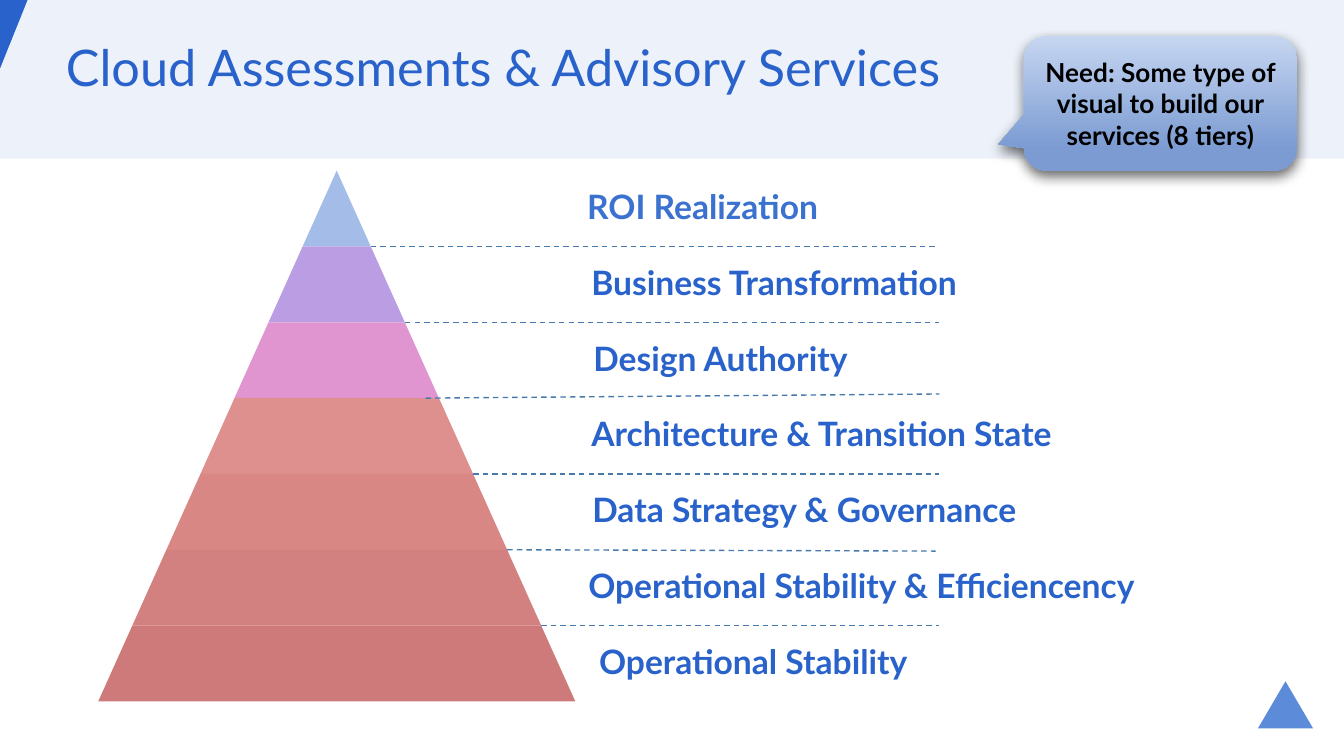
from dataclasses import dataclass

from lxml import etree
from pptx import Presentation
from pptx import util as u
from pptx.dml import color
from pptx.enum import dml, shapes, text
from pptx.oxml import ns

Pt = u.Pt


@dataclass(frozen=True)
class Theme:
    font: str = "Lato"
    blue: str = "2862CA"
    band: str = "EDF2FA"
    mark: str = "5C8BDA"
    rule: str = "4779AC"
    note_top: str = "C6D6F1"
    note_bottom: str = "7B9BD2"
    black: str = "000000"
    title_size: float = 27
    label_size: float = 18
    note_size: float = 14


@dataclass(frozen=True)
class Box:
    left: float
    top: float
    width: float
    height: float

    def lengths(self):
        return [Pt(value) for value in (self.left, self.top, self.width, self.height)]


@dataclass(frozen=True)
class Tier:
    label: str
    fill: str
    label_left: float
    label_color: str = Theme.blue
    rule_start: float = 0
    rule_end: float = 503.3
    rule_drop: float = 0


THEME = Theme()
TIERS = [
    Tier("ROI Realization", "A4BDE8", 314.6, "3B71CF", rule_end=502.6),
    Tier("Business Transformation", "BB9DE4", 316.8),
    Tier("Design Authority", "E195D0", 317.9, rule_start=-7.2, rule_drop=-2.2),
    Tier("Architecture & Transition State", "DD908E", 316.8),
    Tier("Data Strategy & Governance", "D98785", 317.4, rule_end=501.3, rule_drop=0.7),
    Tier("Operational Stability & Efficiencency", "D38080", 315.2),
    Tier("Operational Stability", "CE7A7A", 321.0),
]


def apply(target, **values):
    for name, value in values.items():
        setattr(target, name, value)


def rgb(value):
    return color.RGBColor.from_string(value)


def paint(shape, fill):
    shape.shadow.inherit = False
    shape.fill.solid()
    shape.fill.fore_color.rgb = rgb(fill)
    shape.line.fill.background()


def write(shape, words, size, ink, frame=None, paragraph=None, bold=False):
    apply(shape.text_frame, **(frame or {}))
    first = shape.text_frame.paragraphs[0]
    apply(first, **(paragraph or {}))
    run = first.add_run()
    run.text = words
    apply(run.font, name=THEME.font, size=Pt(size), bold=bold)
    run.font.color.rgb = rgb(ink)


def insets(value):
    return {f"margin_{side}": Pt(value) for side in ("left", "top", "right", "bottom")}


def add_polygon(slide, points, fill):
    start, *others = [(Pt(x), Pt(y)) for x, y in points]
    builder = slide.shapes.build_freeform(*start)
    builder.add_line_segments(others, close=True)
    polygon = builder.convert_to_shape()
    paint(polygon, fill)
    return polygon


def add_header(slide, box):
    title = slide.shapes.title
    band = slide.shapes.add_shape(shapes.MSO_SHAPE.RECTANGLE, *box.lengths())
    paint(band, THEME.band)
    corner = add_polygon(
        slide,
        [(box.left, box.top), (box.left + 14.8, box.top), (box.left, box.top + 36.8)],
        THEME.blue,
    )
    for backdrop in (band, corner):
        title.element.addprevious(backdrop.element)
    place = Box(box.left + 35.3, box.top + 19.4, 659.5, 41)
    apply(title, **dict(zip(("left", "top", "width", "height"), place.lengths())))
    frame = {
        **insets(0),
        "vertical_anchor": text.MSO_ANCHOR.TOP,
        "auto_size": text.MSO_AUTO_SIZE.NONE,
        "word_wrap": True,
    }
    paragraph = {"alignment": text.PP_ALIGN.LEFT, "line_spacing": 1.0, "space_before": Pt(0)}
    write(title, "Cloud Assessments & Advisory Services", THEME.title_size, THEME.blue,
          frame, paragraph)


def add_rule(slide, start, end):
    rule = slide.shapes.add_connector(
        shapes.MSO_CONNECTOR.STRAIGHT, *[Pt(value) for value in (*start, *end)]
    )
    apply(rule.line, width=Pt(0.75), dash_style=dml.MSO_LINE.DASH)
    rule.line.color.rgb = rgb(THEME.rule)
    etree.SubElement(rule.element.spPr, ns.qn("a:effectLst"))


def add_label(slide, box, tier):
    label = slide.shapes.add_textbox(*box.lengths())
    frame = {**insets(0), "vertical_anchor": text.MSO_ANCHOR.MIDDLE, "word_wrap": True}
    write(label, tier.label, THEME.label_size, tier.label_color, frame,
          {"line_spacing": 0.9}, bold=True)


def add_pyramid(slide, box, tiers):
    step = box.height / len(tiers)
    center = box.left + box.width / 2
    slope = box.width / 2 / len(tiers)
    for index, tier in enumerate(tiers):
        top, bottom = box.top + index * step, box.top + (index + 1) * step
        upper, lower = index * slope, (index + 1) * slope
        add_polygon(
            slide,
            [(center - lower, bottom), (center - upper, top),
             (center + upper, top), (center + lower, bottom)],
            tier.fill,
        )
        add_label(slide, Box(tier.label_left, top, 330, step), tier)
    for index, tier in enumerate(tiers[:-1], start=1):
        level = box.top + index * step
        add_rule(slide, (center + index * slope + tier.rule_start, level),
                 (tier.rule_end, level + tier.rule_drop))


def add_callout(slide, box):
    callout = slide.shapes.add_shape(
        shapes.MSO_SHAPE.ROUNDED_RECTANGULAR_CALLOUT, *box.lengths()
    )
    for index, value in enumerate((-0.594, 0.305, 0.167)):
        callout.adjustments[index] = value
    callout.line.fill.background()
    callout.fill.gradient()
    callout.fill.gradient_angle = 270
    stops = ((0, THEME.note_top), (0.84, THEME.note_bottom))
    for stop, (position, tint) in zip(callout.fill.gradient_stops, stops):
        stop.position = position
        stop.color.rgb = rgb(tint)
    callout.shadow.inherit = False
    effects = callout.element.spPr.find(ns.qn("a:effectLst"))
    shadow = etree.SubElement(effects, ns.qn("a:outerShdw"), blurRad=str(Pt(7)),
                              dist=str(Pt(3)), dir=str(84 * 60000), rotWithShape="0")
    shade = etree.SubElement(shadow, ns.qn("a:srgbClr"), val=THEME.black)
    etree.SubElement(shade, ns.qn("a:alpha"), val="60000")
    write(callout, "Need: Some type of visual to build our services (8 tiers)",
          THEME.note_size, THEME.black,
          {"vertical_anchor": text.MSO_ANCHOR.MIDDLE, "word_wrap": True},
          {"alignment": text.PP_ALIGN.CENTER}, bold=True)


def add_mark(slide, box):
    mark = slide.shapes.add_shape(shapes.MSO_SHAPE.ISOSCELES_TRIANGLE, *box.lengths())
    paint(mark, THEME.mark)


def main():
    presentation = Presentation()
    apply(presentation, slide_width=Pt(720), slide_height=Pt(405))
    slide = presentation.slides.add_slide(presentation.slide_layouts[5])
    add_header(slide, Box(0, 0, 720, 85))
    add_mark(slide, Box(673.9, 365, 29.5, 25.2))
    add_pyramid(slide, Box(52.6, 91.4, 255.6, 284.4), TIERS)
    add_callout(slide, Box(548.6, 19.4, 146.2, 72))
    presentation.save("out.pptx")


if __name__ == "__main__":
    main()
